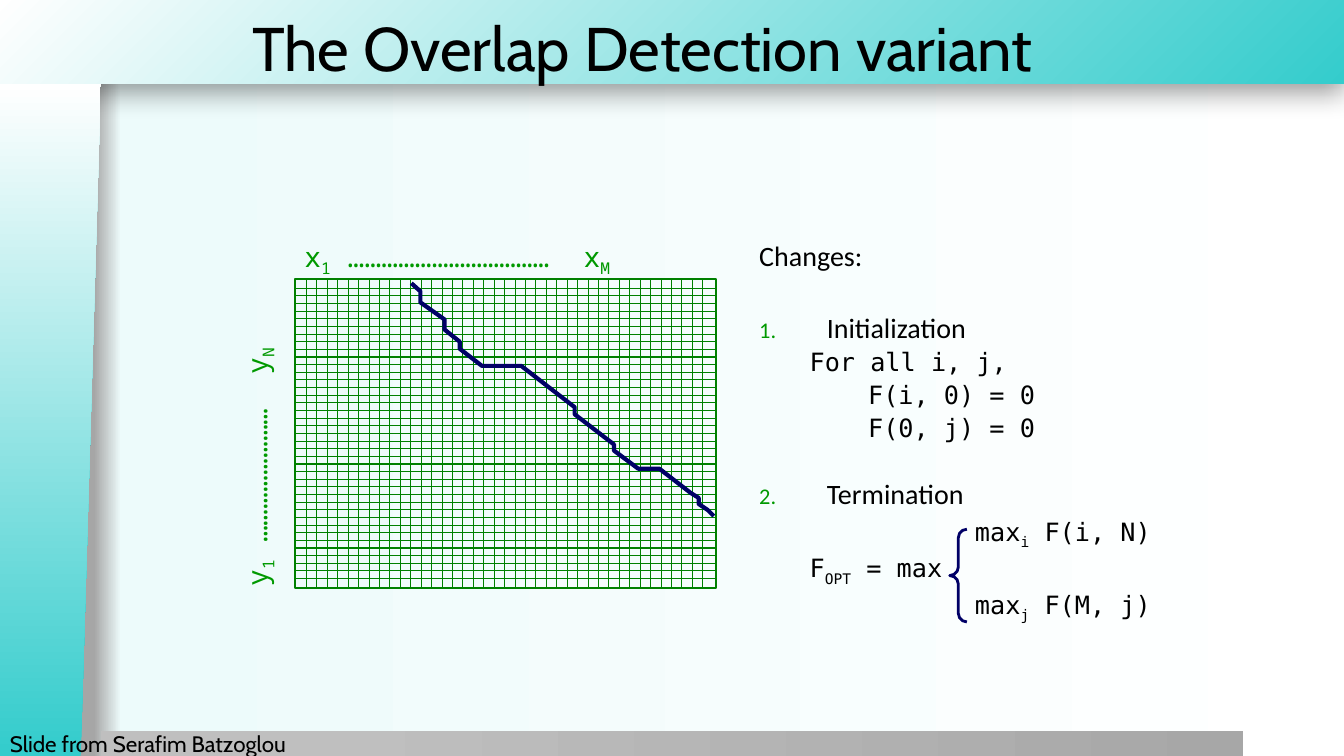
from lxml import etree
from pptx import Presentation
from pptx.dml.color import RGBColor
from pptx.enum import shapes, text
from pptx.oxml import parse_xml
from pptx.oxml.ns import nsdecls, qn
from pptx.util import Inches, Pt

COLORS = {
    "ink": "000000", "teal": "34CCCC", "white": "FFFFFF", "mist": "EDFBFB",
    "shade": "A6A6A6", "silver": "BFBFBF", "steel": "A7A7A7",
    "grid": "008000", "label": "009900", "navy": "000066",
}
TITLE = "The Overlap Detection variant"
CREDIT = "Slide from Serafim Batzoglou"
CALIBRI, MONO = ("Calibri", 20), ("DejaVu Sans Mono", 18)

# (level, font, left margin, first-line indent, space before, numbered, runs)
CHANGES = [
    (0, CALIBRI, 0.67, -0.67, 0, False, ["Changes:"]),
    (0, CALIBRI, 0.67, -0.67, 30, True, ["Initialization"]),
    (1, MONO, 1.08, -0.58, 4, False, ["For all i, j,"]),
    (1, MONO, 1.08, 0, 4, False, ["F(i, 0) = 0"]),
    (1, MONO, 1.08, 0, 4, False, ["F(0, j) = 0"]),
    (0, CALIBRI, 0.67, -0.67, 27, True, ["Termination"]),
    (1, MONO, 2.14, 0, 4, False, ["max", "i", " F(i, N)"]),
    (1, MONO, 1.08, -0.58, 4, False, ["F", "OPT", " = max"]),
    (1, MONO, 2.14, 0, 4, False, ["max", "j", " F(M, j)"]),
]
AXES = [
    ((2.92, 2.33, 4.34, 0.44), 0, 2.77, ["x", "1", " " + "…" * 12 + "\tx", "M"]),
    ((0.94, 4.09, 3.21, 0.44), 270, 2.1, ["y", "1", " " + "…" * 8 + "\ty", "N"]),
]
GRID = (2.93, 2.77, 4.17, 3.06)
GRID_LINES = 39
FIRST_ROW, LAST_ROW = 2.86, 5.74
FIRST_COLUMN, LAST_COLUMN = 3.04, 6.97
ALIGNMENT = [
    (7.08, 5.12), (7.02, 5.06), (6.93, 5), (6.93, 4.94), (6.85, 4.89),
    (6.54, 4.65), (6.33, 4.65), (6.09, 4.47), (6.09, 4.41), (5.7, 4.11),
    (5.7, 4.04), (5.17, 3.63), (4.78, 3.63), (4.56, 3.46), (4.56, 3.39),
    (4.41, 3.27), (4.41, 3.17), (4.17, 3), (4.17, 2.89), (4.08, 2.81),
]
LINEAR = '<a:lin ang="0" scaled="0"/>'
RADIAL = '<a:path path="circle"><a:fillToRect l="100000" t="100000"/></a:path>'


def rgb(name):
    return RGBColor.from_string(COLORS[name])


def inches(values):
    return [Inches(value) for value in values]


def paint_gradient(fill, owner, stops, direction=LINEAR):
    fill.gradient()
    plain = next(owner.iter(qn("a:gradFill")))
    marks = "".join(
        f'<a:gs pos="{at * 1000}"><a:srgbClr val="{COLORS[name]}"/></a:gs>'
        for at, name in stops)
    plain.getparent().replace(plain, parse_xml(
        f'<a:gradFill {nsdecls("a")} rotWithShape="1">'
        f'<a:gsLst>{marks}</a:gsLst>{direction}</a:gradFill>'))


def add_band(slide, preset, box, stops, direction=LINEAR):
    band = slide.shapes.add_shape(preset, *inches(box))
    band.shadow.inherit = False
    paint_gradient(band.fill, band.element, stops, direction)
    band.line.fill.background()
    return band


def outline(part, color, width):
    part.line.color.rgb = rgb(color)
    part.line.width = Pt(width)


def add_outline(slide, preset, box, color, width):
    part = slide.shapes.add_shape(preset, *inches(box))
    part.shadow.inherit = False
    part.fill.background()
    outline(part, color, width)
    return part


def add_grid_line(slide, ends):
    rule = slide.shapes.add_connector(shapes.MSO_CONNECTOR.STRAIGHT, *inches(ends))
    outline(rule, "grid", 0.75)
    etree.SubElement(rule.element.spPr, qn("a:effectLst"))


def write(paragraph, runs, font, color):
    for position, words in enumerate(runs):
        run = paragraph.add_run()
        run.text = words
        run.font.name, run.font.size = font[0], Pt(font[1])
        run.font.color.rgb = rgb(color)
        if position % 2:
            run.font._element.set("baseline", "-25000")


def place(part, box):
    part.left, part.top, part.width, part.height = inches(box)


def add_backdrop(slide):
    paint_gradient(slide.background.fill, slide.element,
                   [(0, "shade"), (7, "shade"), (9, "mist"), (100, "white")])
    preset = shapes.MSO_SHAPE
    header = add_band(slide, preset.RECTANGLE, (-0.01, 0, 13.34, 0.83),
                      [(0, "teal"), (100, "white")], RADIAL)
    header.element.spPr.find(qn("a:effectLst")).append(parse_xml(
        f'<a:outerShdw {nsdecls("a")} blurRad="{Pt(20)}" dist="{Pt(6)}" dir="5400000">'
        f'<a:srgbClr val="{COLORS["ink"]}"><a:alpha val="40000"/></a:srgbClr></a:outerShdw>'))
    add_band(slide, preset.RECTANGLE, (1, 7.25, 11.33, 0.26),
             [(20, "silver"), (100, "steel")])
    side = add_band(slide, preset.FLOWCHART_MANUAL_INPUT, (-2.84, 3.67, 6.68, 1),
                    [(1, "teal"), (100, "white")])
    side.rotation = 270
    side.element.spPr.xfrm.set("flipV", "1")


def fill_title(title):
    title.element.getparent().append(title.element)
    place(title, (2.4, -0.01, 8.5, 0.94))
    frame = title.text_frame
    frame.vertical_anchor = text.MSO_ANCHOR.MIDDLE
    frame.auto_size = text.MSO_AUTO_SIZE.NONE
    frame.paragraphs[0].alignment = text.PP_ALIGN.LEFT
    write(frame.paragraphs[0], [TITLE], ("Cabin", 44), "ink")


def fill_changes(body):
    body.element.getparent().append(body.element)
    place(body, (7.43, 2.35, 4.4, 4.03))
    frame = body.text_frame
    frame.auto_size = text.MSO_AUTO_SIZE.NONE
    for row, (level, font, margin, indent, before, numbered, runs) in enumerate(CHANGES):
        line = frame.add_paragraph() if row else frame.paragraphs[0]
        line.level = level
        line.line_spacing = 0.9
        line.space_before = Pt(before)
        layout = line._p.get_or_add_pPr()
        layout.set("marL", str(Inches(margin)))
        layout.set("indent", str(Inches(indent)))
        if numbered:
            color = etree.SubElement(layout, qn("a:buClr"))
            etree.SubElement(color, qn("a:srgbClr"), val=COLORS["label"])
            etree.SubElement(layout, qn("a:buSzPct"), val="80000")
            etree.SubElement(layout, qn("a:buFont"), typeface="+mj-lt")
            etree.SubElement(layout, qn("a:buAutoNum"), type="arabicPeriod")
        else:
            etree.SubElement(layout, qn("a:buNone"))
        write(line, runs, font, "ink")


def add_label(slide, box, runs, font, color):
    label = slide.shapes.add_textbox(*inches(box))
    label.text_frame.word_wrap = True
    write(label.text_frame.paragraphs[0], runs, font, color)
    return label


def add_matrix(slide):
    left, top, width, height = GRID
    add_outline(slide, shapes.MSO_SHAPE.RECTANGLE, GRID, "grid", 1.5)
    row_step = (LAST_ROW - FIRST_ROW) / (GRID_LINES - 1)
    column_step = (LAST_COLUMN - FIRST_COLUMN) / (GRID_LINES - 1)
    for index in range(GRID_LINES):
        y = FIRST_ROW + index * row_step
        add_grid_line(slide, (left, y, left + width, y))
    for index in range(GRID_LINES):
        x = FIRST_COLUMN + index * column_step
        add_grid_line(slide, (x, top + height, x, top))
    points = [inches(point) for point in ALIGNMENT]
    builder = slide.shapes.build_freeform(*points[0])
    builder.add_line_segments(points[1:], close=False)
    trace = builder.convert_to_shape()
    trace.shadow.inherit = False
    trace.fill.background()
    outline(trace, "navy", 3)
    for box, turn, tab, runs in AXES:
        axis = add_label(slide, box, runs, ("Noto Sans Mono", 20), "label")
        axis.rotation = turn
        layout = axis.text_frame.paragraphs[0]._p.get_or_add_pPr()
        stops = etree.SubElement(layout, qn("a:tabLst"))
        etree.SubElement(stops, qn("a:tab"), pos=str(Inches(tab)), algn="l")


def main():
    deck = Presentation()
    deck.slide_width, deck.slide_height = Inches(13.33), Inches(7.5)
    slide = deck.slides.add_slide(deck.slide_layouts[1])
    add_backdrop(slide)
    fill_title(slide.shapes.title)
    fill_changes(slide.placeholders[1])
    add_label(slide, (0, 7.19, 3.17, 0.38), [CREDIT], ("Cabin", 16), "ink")
    add_matrix(slide)
    brace = add_outline(slide, shapes.MSO_SHAPE.LEFT_BRACE, (9.42, 5.25, 0.17, 0.92), "navy", 2)
    brace.adjustments[0] = brace.adjustments[1] = 0.5
    deck.save("out.pptx")


if __name__ == "__main__":
    main()
